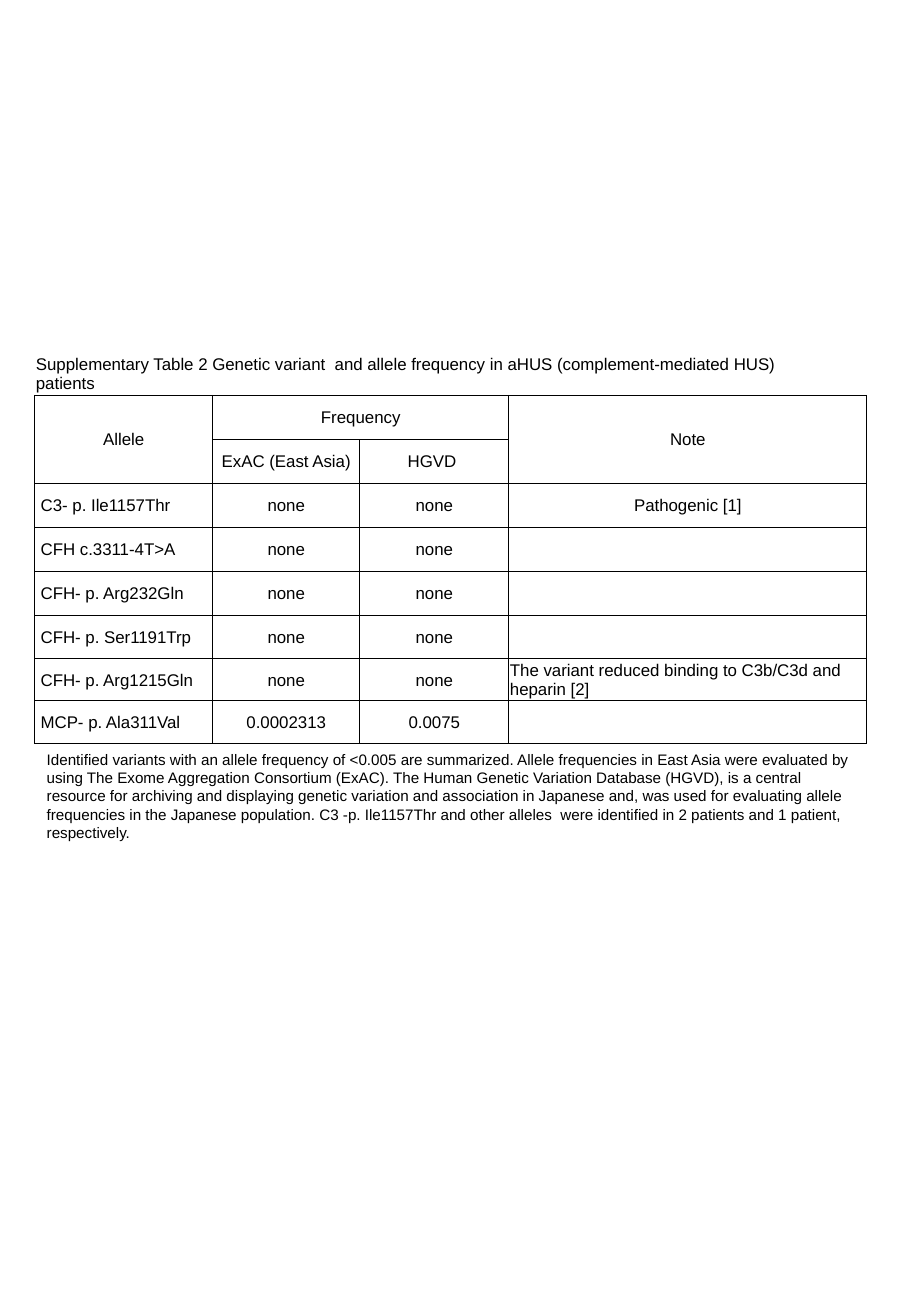
import pptx
import pptx.util
import pptx.dml.color
import pptx.enum.text
import pptx.oxml
import pptx.oxml.ns

Pt = pptx.util.Pt
ALIGN = pptx.enum.text.PP_ALIGN
BLACK = pptx.dml.color.RGBColor(0, 0, 0)
FONT = "Arial"

TITLE = ("Supplementary Table 2 Genetic variant  and allele frequency in aHUS "
         "(complement-mediated HUS)\npatients")
ROWS = [
    (TITLE, "", "", ""),
    ("Allele", "Frequency", "", "Note"),
    ("", "ExAC (East Asia)", "HGVD ", ""),
    ("C3- p. Ile1157Thr", "none", "none", "Pathogenic [1]"),
    ("CFH c.3311-4T>A", "none", "none", ""),
    ("CFH- p. Arg232Gln", "none", "none", ""),
    ("CFH- p. Ser1191Trp", "none", "none", ""),
    ("CFH- p. Arg1215Gln", "none", "none",
     "The variant reduced binding to C3b/C3d and heparin [2]"),
    ("MCP- p. Ala311Val", "0.0002313", "0.0075", ""),
]
NOTE = (
    "Identified variants with an allele frequency of <0.005 are summarized. "
    "Allele frequencies in East Asia were evaluated by using The Exome "
    "Aggregation Consortium (ExAC). The Human Genetic Variation Database "
    "(HGVD), is a central resource for archiving and displaying genetic "
    "variation and association in Japanese and, was used for evaluating allele "
    "frequencies in the Japanese population. C3 -p. Ile1157Thr and other "
    "alleles  were identified in 2 patients and 1 patient, respectively."
)
MERGES = [((0, 0), (0, 3)), ((1, 0), (2, 0)), ((1, 1), (1, 2)), ((1, 3), (2, 3))]
WIDTHS = [105.4, 87.3, 88.3, 212.2]
HEIGHTS = [26] * 7 + [25, 25.5]
LEFT, TOP = 20.6, 208.5
HEAD = 3
LONG = (7, 3)


def style(frame, size):
    for para in frame.paragraphs:
        for run in para.runs:
            run.font.name = FONT
            run.font.size = Pt(size)
            run.font.color.rgb = BLACK


def border(cell, side, width):
    line = pptx.oxml.parse_xml(
        f'<a:ln{side} {pptx.oxml.ns.nsdecls("a")} w="{Pt(width)}">'
        + (f'<a:solidFill><a:srgbClr val="{BLACK}"/></a:solidFill>'
           if width else "<a:noFill/>")
        + f"</a:ln{side}>")
    cell._tc.get_or_add_tcPr().append(line)


def edge(row, side):
    if row == 0:
        return 1 if side == "B" else 0
    return 1 if row == 1 and side == "T" else 0.5


def fill_cell(cell, row, col, text):
    label = row >= HEAD and col == 0
    cell.margin_left = Pt(3.5 if label else 0.7)
    cell.margin_right = cell.margin_top = Pt(0.7)
    cell.margin_bottom = 0
    cell.vertical_anchor = pptx.enum.text.MSO_ANCHOR.MIDDLE
    for side in "LRTB":
        border(cell, side, edge(row, side))
    cell.fill.background()
    if text:
        cell.text_frame.text = text
        plain = row == 0 or label or (row, col) == LONG
        for para in cell.text_frame.paragraphs:
            para.alignment = ALIGN.LEFT if plain else ALIGN.CENTER
        style(cell.text_frame, 10)


def main():
    deck = pptx.Presentation()
    deck.slide_width, deck.slide_height = Pt(540), Pt(780)
    slide = deck.slides.add_slide(deck.slide_layouts[6])
    wide, high = sum(WIDTHS), sum(HEIGHTS)

    table = slide.shapes.add_table(
        len(ROWS), len(WIDTHS), Pt(LEFT), Pt(TOP), Pt(wide), Pt(high)).table
    table.first_row = table.horz_banding = False
    for col, width in zip(table.columns, WIDTHS):
        col.width = Pt(width)
    for row, height in zip(table.rows, HEIGHTS):
        row.height = Pt(height)
    for start, end in MERGES:
        table.cell(*start).merge(table.cell(*end))
    for row, texts in enumerate(ROWS):
        for col, text in enumerate(texts):
            fill_cell(table.cell(row, col), row, col, text)

    box = slide.shapes.add_textbox(Pt(LEFT), Pt(TOP + high), Pt(wide), Pt(62))
    box.text_frame.word_wrap = True
    box.text_frame.text = NOTE
    style(box.text_frame, 9)
    deck.save("out.pptx")


if __name__ == "__main__":
    main()
